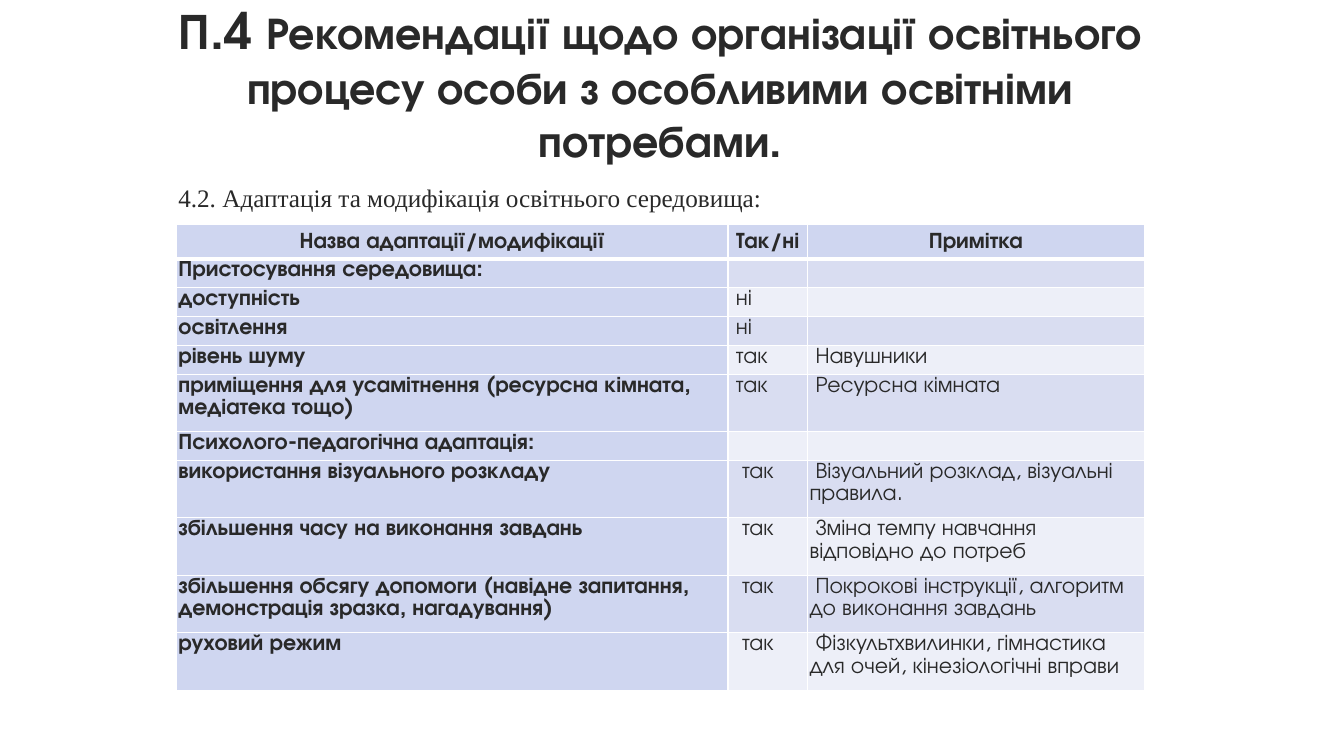
from lxml import etree
from pptx import Presentation
from pptx.dml.color import RGBColor
from pptx.enum.text import MSO_ANCHOR, PP_ALIGN
from pptx.oxml.ns import qn
from pptx.util import Inches, Pt

CENTER, LEFT = PP_ALIGN.CENTER, PP_ALIGN.LEFT
TOP, MIDDLE = MSO_ANCHOR.TOP, MSO_ANCHOR.MIDDLE

SANS, SERIF = "TeX Gyre Adventor", "Times New Roman"
INK, WHITE = "292929", "FFFFFF"
NAME_FILL, ODD_FILL, EVEN_FILL = "CFD6F0", "D9DDF1", "EDEFF8"

TITLE_NUMBER = "П.4 "
TITLE = ("Рекомендації щодо організації освітнього процесу особи "
         "з особливими освітніми потребами.")
SUBTITLE = "4.2. Адаптація та модифікація освітнього середовища:"
HEADINGS = ("Назва адаптації/модифікації", "Так/ні", "Примітка")
# name, answer, note, lines in the row, steps of answer indent
ADAPTATIONS = [
    ("Пристосування середовища:", "", "", 1, 0),
    ("доступність", "ні", "", 1, 1),
    ("освітлення", "ні", "", 1, 1),
    ("рівень шуму", "так", "Навушники", 1, 1),
    ("приміщення для усамітнення (ресурсна кімната, медіатека тощо)",
     "так", "Ресурсна кімната", 2, 1),
    ("Психолого-педагогічна адаптація:", "", "", 1, 0),
    ("використання візуального розкладу",
     "так", "Візуальний розклад, візуальні правила.", 2, 2),
    ("збільшення часу на виконання завдань",
     "так", "Зміна темпу навчання відповідно до потреб", 2, 2),
    ("збільшення обсягу допомоги (навідне запитання, демонстрація зразка, "
     "нагадування)",
     "так", "Покрокові інструкції, алгоритм до виконання завдань", 2, 2),
    ("руховий режим",
     "так", "Фізкультхвилинки, гімнастика для очей, кінезіологічні вправи", 2, 2),
]
COLUMN_WIDTHS = (5.47, 0.79, 3.34)
HEADING_HEIGHT, LINE_HEIGHT = 0.34, 0.285
INDENT_STEP = 0.06
CELL_SIZE = 16


def color(hex_value):
    return RGBColor.from_string(hex_value)


def write(paragraph, text, size=CELL_SIZE, font=SANS, bold=False, align=LEFT,
          spacing=None, indent=0):
    paragraph.alignment = align
    if spacing:
        paragraph.line_spacing = spacing
    if indent:
        paragraph._p.get_or_add_pPr().set("indent", str(Inches(indent)))
    if not text:
        # The end mark keeps an empty cell as low as the others
        etree.SubElement(paragraph._p, qn("a:endParaRPr"), sz=str(size * 100))
        return
    run = paragraph.add_run()
    run.text = text
    run.font.size = Pt(size)
    run.font.name = font
    run.font.bold = bold
    run.font.color.rgb = color(INK)


def add_box(slide, left, top, width, height, wrap, anchor):
    box = slide.shapes.add_textbox(*map(Inches, (left, top, width, height)))
    box.text_frame.word_wrap = wrap
    box.text_frame.vertical_anchor = anchor
    return box.text_frame.paragraphs[0]


def set_borders(cell, bottom):
    properties = cell._tc.get_or_add_tcPr()
    for side, points in (("L", 1), ("R", 1), ("T", 1), ("B", bottom)):
        line = etree.SubElement(properties, qn("a:ln" + side), w=str(Pt(points)))
        fill = etree.SubElement(line, qn("a:solidFill"))
        etree.SubElement(fill, qn("a:srgbClr"), val=WHITE)


def fill_cell(cell, text, fill, bottom=1, anchor=TOP, **text_format):
    set_borders(cell, bottom)
    cell.fill.solid()
    cell.fill.fore_color.rgb = color(fill)
    cell.margin_left = cell.margin_right = Inches(0.02)
    cell.margin_top = cell.margin_bottom = 0
    cell.vertical_anchor = anchor
    write(cell.text_frame.paragraphs[0], text, spacing=1.07, **text_format)


def add_adaptations(slide):
    heights = [HEADING_HEIGHT] + [LINE_HEIGHT * row[3] for row in ADAPTATIONS]
    table = slide.shapes.add_table(
        len(heights), len(COLUMN_WIDTHS), Inches(1.75), Inches(2.23),
        Inches(sum(COLUMN_WIDTHS)), Inches(sum(heights))).table
    for column, width in zip(table.columns, COLUMN_WIDTHS):
        column.width = Inches(width)
    for row, height in zip(table.rows, heights):
        row.height = Inches(height)

    for column, heading in enumerate(HEADINGS):
        fill_cell(table.cell(0, column), heading, NAME_FILL, bottom=3,
                  anchor=MIDDLE, bold=True, align=CENTER)
    for row, (name, answer, note, _, steps) in enumerate(ADAPTATIONS, 1):
        band = ODD_FILL if row % 2 else EVEN_FILL
        fill_cell(table.cell(row, 0), name, NAME_FILL, bold=True)
        fill_cell(table.cell(row, 1), answer, band, indent=steps * INDENT_STEP)
        fill_cell(table.cell(row, 2), note, band, indent=INDENT_STEP)


def main():
    deck = Presentation()
    deck.slide_width, deck.slide_height = Inches(13.33), Inches(7.5)
    slide = deck.slides.add_slide(deck.slide_layouts[6])

    title = add_box(slide, 1.49, -0.06, 10.12, 1.78, True, TOP)
    write(title, TITLE_NUMBER, size=36, bold=True, align=CENTER)
    write(title, TITLE, size=32, bold=True, align=CENTER)
    add_adaptations(slide)
    subtitle = add_box(slide, 1.67, 1.76, 6.04, 0.4, False, MIDDLE)
    write(subtitle, SUBTITLE, size=18, font=SERIF)
    deck.save("out.pptx")


if __name__ == "__main__":
    main()
